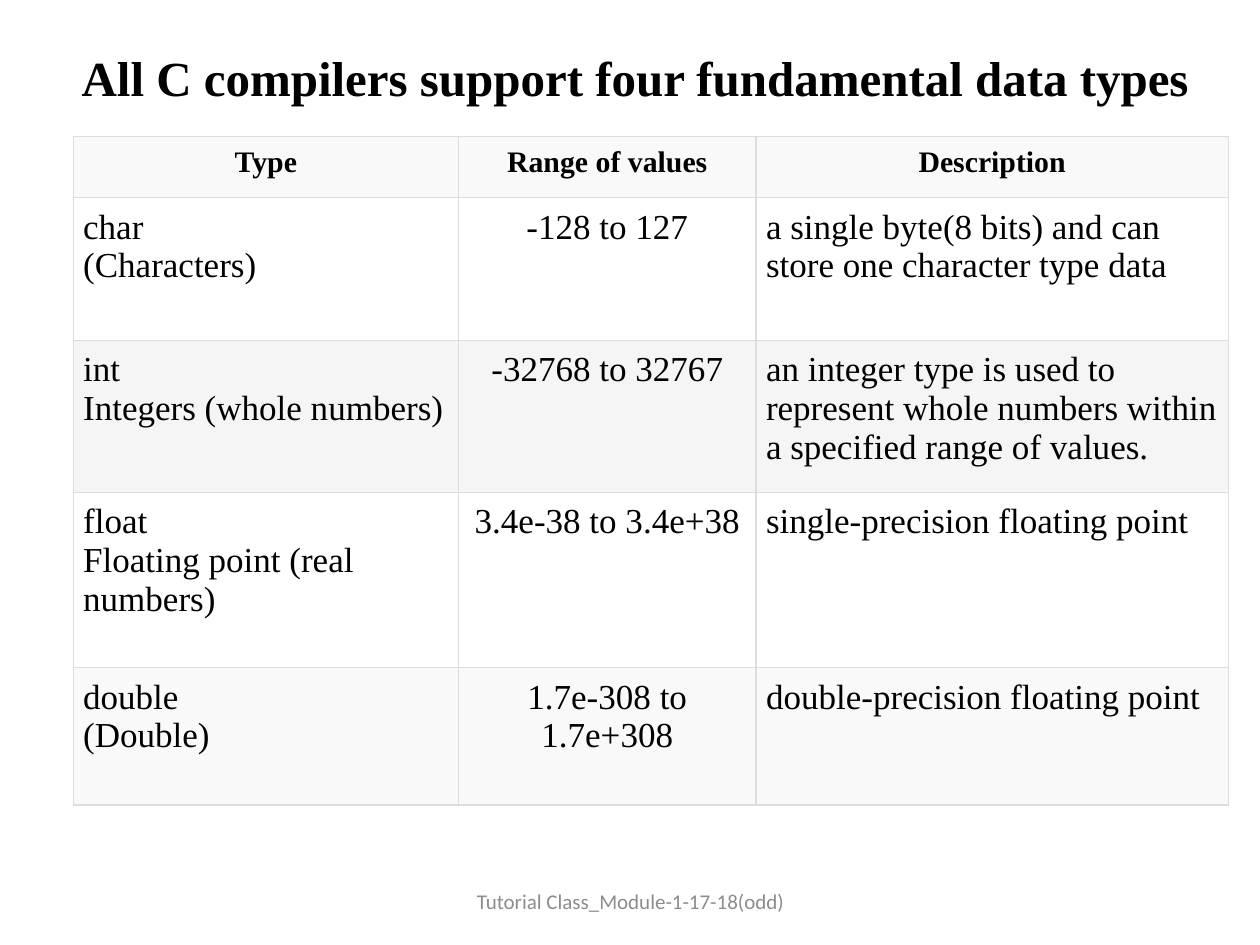
"""Build the slide on the four fundamental C data types."""
from lxml import etree
from pptx import Presentation
from pptx.dml.color import RGBColor
from pptx.enum.text import MSO_ANCHOR, PP_ALIGN
from pptx.oxml.ns import qn
from pptx.util import Inches, Pt

CENTER, LEFT = PP_ALIGN.CENTER, PP_ALIGN.LEFT
MIDDLE, TOP = MSO_ANCHOR.MIDDLE, MSO_ANCHOR.TOP
SERIF, SANS = "Times New Roman", "Calibri"
COLORS = {
    "ink": "000000",
    "footer": "8C8C8C",
    "border": "DDDDDD",
    "pale": "F9F9F9",
    "white": "FFFFFF",
    "grey": "F5F5F5",
}

COLUMNS = [(3.06, LEFT), (2.36, CENTER), (3.75, LEFT)]
ROWS = [
    (0.49, "pale", ["Type", "Range of values", "Description"]),
    (1.13, "white", ["char\n(Characters)", "-128 to 127",
                     "a single byte(8 bits) and can store one character type data"]),
    (1.21, "grey", ["int\nIntegers (whole numbers)", "-32768 to 32767",
                    "an integer type is used to represent whole numbers "
                    "within a specified range of values."]),
    (1.39, "white", ["float\nFloating point (real numbers)", "3.4e-38 to 3.4e+38",
                     "single-precision floating point"]),
    (1.09, "pale", ["double\n(Double)", "1.7e-308 to 1.7e+308",
                    "double-precision floating point"]),
]


def write(frame, text, size, font, color, bold, align):
    paragraph = frame.paragraphs[0]
    paragraph.alignment = align
    for index, line in enumerate(text.split("\n")):
        if index:
            paragraph.add_line_break()
        run = paragraph.add_run()
        run.text = line
        run.font.size = Pt(size)
        run.font.name = font
        run.font.bold = bold
        run.font.color.rgb = RGBColor.from_string(COLORS[color])


def draw_borders(cell):
    properties = cell._tc.get_or_add_tcPr()
    for side in ("lnL", "lnR", "lnT", "lnB"):
        line = etree.SubElement(properties, qn(f"a:{side}"), w=str(Pt(0.75)))
        fill = etree.SubElement(line, qn("a:solidFill"))
        etree.SubElement(fill, qn("a:srgbClr"), val=COLORS["border"])


deck = Presentation()
deck.slide_width, deck.slide_height = Inches(10), Inches(7.5)
slide = deck.slides.add_slide(deck.slide_layouts[5])

title = slide.shapes.title
title.left, title.top = Inches(0.25), Inches(0.3)
title.width, title.height = Inches(9.58), Inches(0.62)
title.text_frame.vertical_anchor = MIDDLE
write(title.text_frame, "All C compilers support four fundamental data types",
      28, SERIF, "ink", True, CENTER)

types = slide.shapes.add_table(
    len(ROWS), len(COLUMNS), Inches(0.58), Inches(1.08),
    Inches(sum(width for width, _ in COLUMNS)),
    Inches(sum(height for height, _, _ in ROWS))).table
for column, (width, _) in zip(types.columns, COLUMNS):
    column.width = Inches(width)

for r, (height, shade, texts) in enumerate(ROWS):
    types.rows[r].height = Inches(height)
    header = r == 0
    for c, text in enumerate(texts):
        cell = types.cell(r, c)
        cell.margin_left = cell.margin_right = Inches(0.08)
        cell.margin_top = cell.margin_bottom = Inches(0.08)
        cell.vertical_anchor = TOP
        draw_borders(cell)
        cell.fill.solid()
        cell.fill.fore_color.rgb = RGBColor.from_string(COLORS[shade])
        write(cell.text_frame, text, 17 if header else 20, SERIF, "ink", header,
              CENTER if header else COLUMNS[c][1])

footer = slide.shapes.add_textbox(
    Inches(3.42), Inches(6.95), Inches(3.17), Inches(0.4)).text_frame
footer.word_wrap = True
footer.vertical_anchor = MIDDLE
write(footer, "Tutorial Class_Module-1-17-18(odd)", 12, SANS, "footer", False, CENTER)

deck.save("out.pptx")
